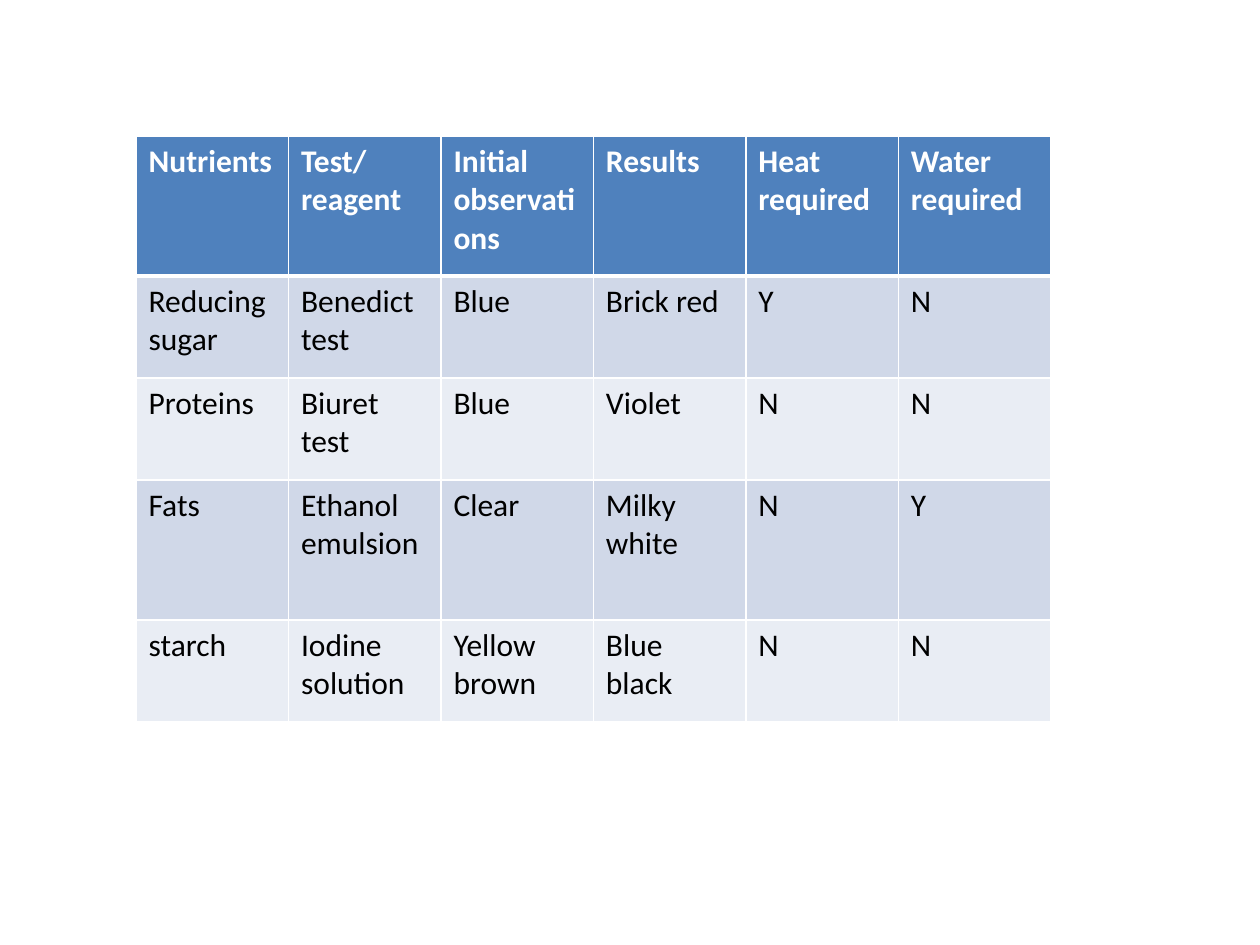
from lxml import etree
from pptx import Presentation
from pptx.dml.color import RGBColor
from pptx.oxml import ns
from pptx.util import Inches, Pt

COLORS = {
    "header": "4F81BD",
    "odd_row": "D0D8E8",
    "even_row": "E9EDF4",
    "white": "FFFFFF",
    "black": "000000",
}
FONT = "Calibri"
COLUMN_WIDTH = 1.21
ROW_HEIGHTS = [1.11, 0.81, 0.81, 1.11, 0.81]
FOOD_TESTS = [
    ["Nutrients", "Test/ reagent", "Initial observations", "Results",
     "Heat required", "Water required"],
    ["Reducing sugar", "Benedict test", "Blue", "Brick red", "Y", "N"],
    ["Proteins", "Biuret test", "Blue", "Violet", "N", "N"],
    ["Fats", "Ethanol emulsion", "Clear", "Milky white", "N", "Y"],
    ["starch", "Iodine solution", "Yellow brown", "Blue black", "N", "N"],
]


def write_text(frame, text, size=18, color="black", bold=False):
    span = frame.paragraphs[0].add_run()
    span.text = text
    span.font.name = FONT
    span.font.size = Pt(size)
    span.font.bold = bold
    span.font.color.rgb = RGBColor.from_string(COLORS[color])


def fill_cell(cell, color):
    cell.fill.solid()
    cell.fill.fore_color.rgb = RGBColor.from_string(COLORS[color])


def set_borders(cell, color="white", **widths):
    """Draw the four cell borders; widths are points, 1 unless given."""
    properties = cell._tc.get_or_add_tcPr()
    # The schema wants the border lines before the fill.
    for position, side in enumerate("LRTB"):
        line = etree.Element(ns.qn(f"a:ln{side}"), w=str(Pt(widths.get(side, 1))))
        fill = etree.SubElement(line, ns.qn("a:solidFill"))
        etree.SubElement(fill, ns.qn("a:srgbClr"), val=COLORS[color])
        properties.insert(position, line)


def add_food_table(page, rows, left, top):
    column_count = len(rows[0])
    table = page.shapes.add_table(
        len(rows), column_count, Inches(left), Inches(top),
        Inches(COLUMN_WIDTH * column_count), Inches(sum(ROW_HEIGHTS))).table
    for column in table.columns:
        column.width = Inches(COLUMN_WIDTH)
    for index, (row, height) in enumerate(zip(table.rows, ROW_HEIGHTS)):
        row.height = Inches(height)
        is_header = index == 0
        band = "header" if is_header else "odd_row" if index % 2 else "even_row"
        for cell, text in zip(row.cells, rows[index]):
            write_text(cell.text_frame, text, bold=is_header,
                       color="white" if is_header else "black")
            fill_cell(cell, band)
            set_borders(cell, T=3 if index == 1 else 1, B=3 if is_header else 1)


def main():
    deck = Presentation()
    deck.slide_width, deck.slide_height = Inches(10), Inches(7.5)
    page = deck.slides.add_slide(deck.slide_layouts[6])
    add_food_table(page, FOOD_TESTS, left=1.08, top=1.08)
    deck.save("out.pptx")


if __name__ == "__main__":
    main()
